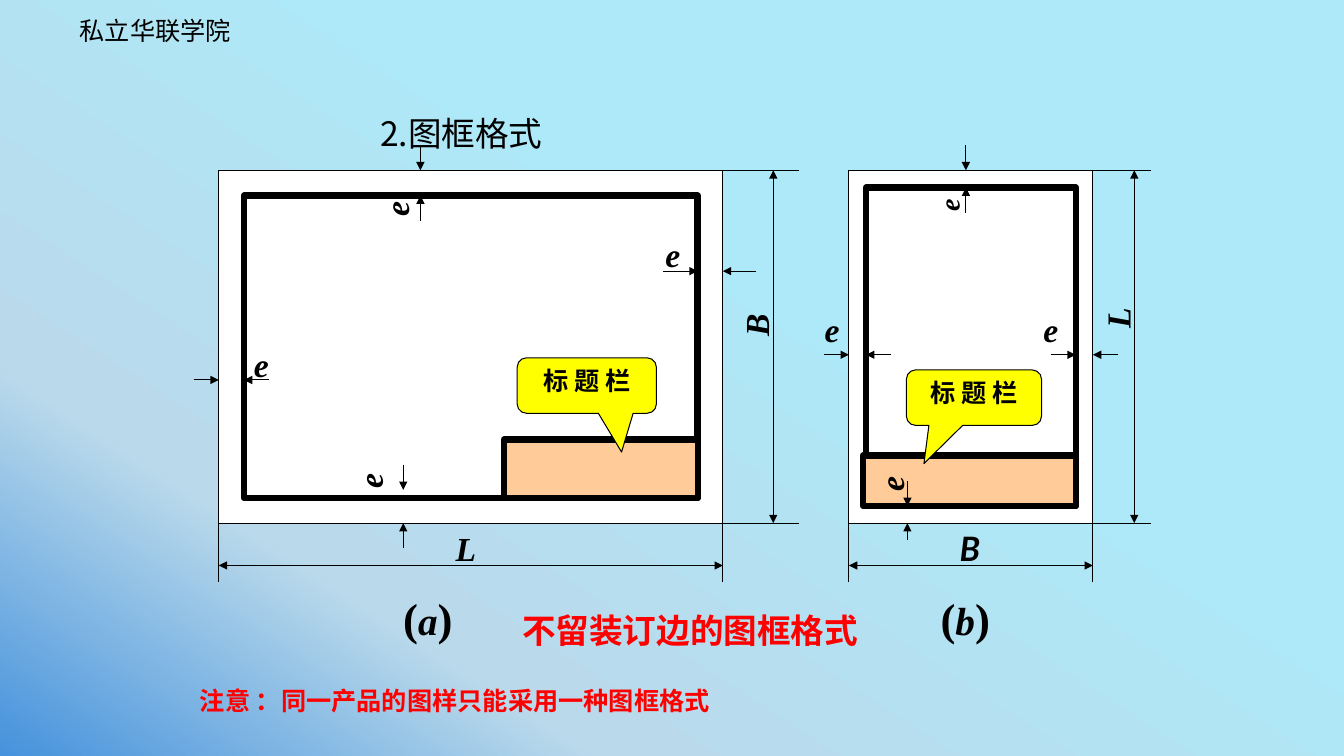
from lxml.etree import SubElement
from pptx import Presentation
from pptx.dml.color import RGBColor
from pptx.enum.shapes import MSO_CONNECTOR, MSO_SHAPE
from pptx.enum.text import MSO_ANCHOR, MSO_AUTO_SIZE, PP_ALIGN
from pptx.oxml.ns import qn
from pptx.util import Emu, Pt

PX = 9144  # 100 px to the inch
COLORS = {"black": "000000", "white": "FFFFFF", "red": "FF0000", "yellow": "FFFF00",
          "peach": "FFCC99", "deep": "4692DC", "mist": "BADAEB", "aqua": "ADE9F8"}
CHINESE, SERIF, LATO = "Noto Sans CJK SC", "Times New Roman", "Lato"

# Each gap: side, distance along it, inset of inner tip, inner and outer arrow lengths
# Each label: text, box inside the drawing, format
SHEET_A = {
    "box": (217, 169, 500, 350), "margin": 25, "block": (192, 58),
    "reach": 75, "dimension": 50,
    "gaps": [("top", 200, 25, 25, 25), ("right", 100, 25, 34, 33),
             ("bottom", 183, 33, 25, 25), ("left", 208, 25, 25, 25)],
    "labels": [("L", (225, 350, 67, 50), {}), ("B", (495, 112, 75, 50), {"rotation": 270}),
               ("e", (433, 58, 67, 50), {}), ("e", (116, 267, 67, 50), {"rotation": 270}),
               ("e", (25, 167, 67, 50), {}), ("e", (142, -3, 67, 50), {"rotation": 270})],
    "callout": ((296, 186, 138, 55), 0.25, 1.2),
    "caption": ("a", (173, 412, 69, 63)),
}
SHEET_B = {
    "box": (842, 169, 242, 350), "margin": 17, "block": (211, 50),
    "reach": 58, "dimension": 41,
    "gaps": [("top", 116, 17, 25, 25), ("right", 183, 17, 25, 25),
             ("bottom", 58, 17, 25, 17), ("left", 183, 17, 25, 25)],
    "labels": [("L", (250, 125, 33, 51), {"rotation": 270}),
               ("B", (100, 350, 108, 51), {"font": LATO}),
               ("e", (8, 275, 67, 50), {"rotation": 270, "inset": 15}),
               ("e", (183, 133, 67, 50), {}), ("e", (-34, 133, 67, 50), {}),
               ("e", (65, 10, 67, 43), {"rotation": 270, "inset": 24, "size": 20})],
    "callout": ((57, 198, 134, 55), -0.37, 1.19),
    "caption": ("b", (81, 412, 69, 63)),
}


def color(name):
    return RGBColor.from_string(COLORS[name])


def emu(*lengths):
    return [Emu(round(length * PX)) for length in lengths]


def write(shape, runs, size=24, font=CHINESE, ink="black", bold=False, italic=False,
          align=PP_ALIGN.LEFT, wrap=True, inset=10, rotation=0):
    """Fill a shape with one paragraph; runs is a string or (text, size, italic) tuples."""
    frame = shape.text_frame
    frame.word_wrap = wrap
    frame.auto_size = MSO_AUTO_SIZE.NONE
    frame.vertical_anchor = MSO_ANCHOR.TOP
    frame.margin_left, frame.margin_right, frame.margin_top, frame.margin_bottom = emu(
        inset, min(inset, 10), 5, 5)
    shape.rotation = rotation
    paragraph = frame.paragraphs[0]
    paragraph.alignment = align
    for text, run_size, run_italic in [(runs, size, italic)] if isinstance(runs, str) else runs:
        run = paragraph.add_run()
        run.text = text
        run.font.name, run.font.size = font, Pt(run_size)
        run.font.bold, run.font.italic = bold, run_italic
        run.font.color.rgb = color(ink)
        SubElement(run._r.get_or_add_rPr(), qn("a:ea"), typeface=font)


def add_text(shapes, box, runs, **style):
    write(shapes.add_textbox(*emu(*box)), runs, **style)


def add_box(shapes, box, fill, weight, preset=MSO_SHAPE.RECTANGLE):
    shape = shapes.add_shape(preset, *emu(*box))
    shape.shadow.inherit = False
    shape.fill.solid()
    shape.fill.fore_color.rgb = color(fill)
    shape.line.color.rgb = color("black")
    shape.line.width = Pt(weight)
    return shape


def add_line(shapes, start, end, head=False, tail=False):
    connector = shapes.add_connector(MSO_CONNECTOR.STRAIGHT, *emu(*start, *end))
    connector.line.color.rgb = color("black")
    connector.line.width = Pt(0.75)
    outline = connector.line._get_or_add_ln()
    for wanted, tag in ((head, "a:headEnd"), (tail, "a:tailEnd")):
        if wanted:
            SubElement(outline, qn(tag), type="triangle")
    SubElement(connector._element.spPr, qn("a:effectLst"))


def draw_gap(shapes, box, side, along, inset, inner, outer):
    """Two arrows facing each other across the border between sheet and frame."""
    left, top, width, height = box
    x, y, out_x, out_y = {
        "top": (left + along, top, 0, -1),
        "bottom": (left + along, top + height, 0, 1),
        "left": (left, top + along, -1, 0),
        "right": (left + width, top + along, 1, 0),
    }[side]
    for start, tip in ((outer, 0), (-inset - inner, -inset)):
        add_line(shapes, (x + out_x * start, y + out_y * start),
                 (x + out_x * tip, y + out_y * tip), tail=True)


def draw_dimensions(shapes, box, margin, reach, offset):
    left, top, width, height = box
    right, bottom = left + width, top + height
    for y in (top, bottom):
        add_line(shapes, (right - margin, y), (right + reach, y))
    for x in (left, right):
        add_line(shapes, (x, bottom - margin), (x, bottom + 58))
    add_line(shapes, (right + offset, top), (right + offset, bottom), head=True, tail=True)
    add_line(shapes, (left, bottom + 42), (right, bottom + 42), head=True, tail=True)


def draw_sheet(slide, sheet):
    shapes = slide.shapes.add_group_shape().shapes
    box, margin = sheet["box"], sheet["margin"]
    left, top, width, height = box

    def inside(part):
        return (left + part[0], top + part[1], part[2], part[3])

    # Sheet, frame and title block
    add_box(shapes, box, "white", 0.75)
    add_box(shapes, inside((margin, margin, width - 2 * margin, height - 2 * margin)),
            "white", 4.5)
    block_width, block_height = sheet["block"]
    add_box(shapes, inside((width - margin - block_width, height - margin - block_height,
                            block_width, block_height)), "peach", 4.5)

    # Dimensions and border arrows
    draw_dimensions(shapes, box, margin, sheet["reach"], sheet["dimension"])
    for gap in sheet["gaps"]:
        draw_gap(shapes, box, *gap)

    # Letters and caption
    for text, part, style in sheet["labels"]:
        add_text(shapes, inside(part), text,
                 **{"font": SERIF, "bold": True, "italic": True, **style})
    letter, part = sheet["caption"]
    add_text(shapes, inside(part), [("(", 32, False), (letter, 28, True), (")", 32, False)],
             font=SERIF, bold=True, wrap=False)

    # Title block callout
    part, tip_x, tip_y = sheet["callout"]
    callout = add_box(shapes, inside(part), "yellow", 0.75,
                      MSO_SHAPE.ROUNDED_RECTANGULAR_CALLOUT)
    callout.adjustments[0], callout.adjustments[1] = tip_x, tip_y
    write(callout, "标 题 栏", size=18, bold=True, align=PP_ALIGN.CENTER)


def paint_background(slide):
    fill = slide.background.fill
    fill.gradient()
    fill.gradient_angle = 57
    stops = slide.background._cSld.find(".//" + qn("a:gsLst"))
    for stop in list(stops):
        stops.remove(stop)
    for position, name in ((0, "deep"), (24, "mist"), (62, "aqua")):
        stop = SubElement(stops, qn("a:gs"), pos=str(position * 1000))
        SubElement(stop, qn("a:srgbClr"), val=COLORS[name])


def draw_texts(slide):
    title = slide.shapes.title
    title.left, title.top, title.width, title.height = emu(367, 107, 536, 50)
    write(title, "2.图框格式")
    add_text(slide.shapes, (74, 10, 294, 40), "私立华联学院", size=18,
             font="Noto Sans CJK JP", inset=5)
    add_text(slide.shapes, (507, 600, 355, 50), "不留装订边的图框格式", ink="red",
             bold=True, align=PP_ALIGN.CENTER, wrap=False)
    add_text(slide.shapes, (167, 675, 568, 40), "注意 ：同一产品的图样只能采用一种图框格式",
             size=18, ink="red", bold=True, align=PP_ALIGN.CENTER)


def main():
    presentation = Presentation()
    presentation.slide_width, presentation.slide_height = emu(1333, 750)
    slide = presentation.slides.add_slide(presentation.slide_layouts[5])
    paint_background(slide)
    draw_texts(slide)
    for sheet in (SHEET_A, SHEET_B):
        draw_sheet(slide, sheet)
    presentation.save("out.pptx")


if __name__ == "__main__":
    main()
